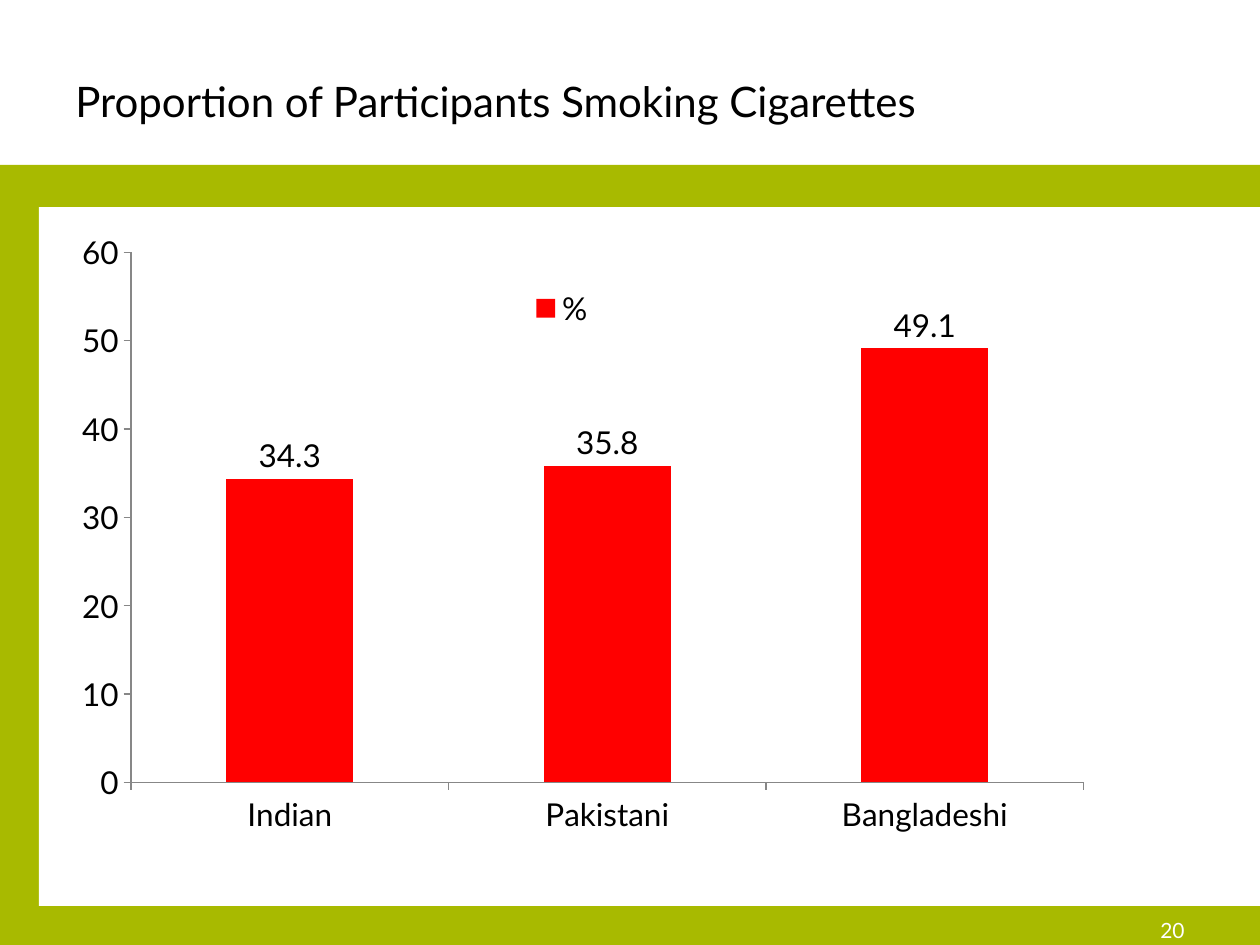
from pptx import Presentation
from pptx.chart.data import CategoryChartData
from pptx.dml.color import RGBColor
from pptx.enum.chart import XL_CHART_TYPE, XL_LABEL_POSITION, XL_LEGEND_POSITION, XL_TICK_MARK
from pptx.enum.shapes import MSO_SHAPE
from pptx.enum.text import MSO_ANCHOR, PP_ALIGN
from pptx.oxml import parse_xml
from pptx.oxml.ns import nsdecls
from pptx.util import Pt

PX = 914400 // 126
FONT = "Lato"
GREEN = RGBColor(0xA8, 0xBA, 0x00)
WHITE = RGBColor(0xFF, 0xFF, 0xFF)
BLACK = RGBColor(0x00, 0x00, 0x00)
RED = RGBColor(0xFF, 0x00, 0x00)
GREY = RGBColor(0x87, 0x87, 0x87)

deck = Presentation()
deck.slide_width = 1260 * PX
deck.slide_height = 945 * PX
slide = deck.slides.add_slide(deck.slide_layouts[6])


def add_text(text, box, size, color, align=PP_ALIGN.LEFT):
    frame = slide.shapes.add_textbox(*[n * PX for n in box]).text_frame
    frame.word_wrap = True
    frame.vertical_anchor = MSO_ANCHOR.MIDDLE
    line = frame.paragraphs[0]
    line.text = text
    line.alignment = align
    line.font.name = FONT
    line.font.size = Pt(size)
    line.font.color.rgb = color


def set_layout(parent, index, **parts):
    for old in parent.xpath("c:layout"):
        parent.remove(old)
    modes = "".join(f'<c:{axis}Mode val="edge"/>' for axis in "xy")
    sizes = "".join(f'<c:{key} val="{val}"/>' for key, val in parts.items())
    inner = '<c:layoutTarget val="inner"/>' if index == 0 else ""
    parent.insert(index, parse_xml(
        f'<c:layout {nsdecls("c")}><c:manualLayout>{inner}{modes}{sizes}'
        "</c:manualLayout></c:layout>"))


for box, color in (((0, 165, 1260, 780), GREEN), ((39, 207, 1221, 699), WHITE)):
    panel = slide.shapes.add_shape(MSO_SHAPE.RECTANGLE, *[n * PX for n in box])
    panel.shadow.inherit = False
    panel.fill.solid()
    panel.fill.fore_color.rgb = color
    panel.line.fill.background()

add_text("Proportion of Participants Smoking Cigarettes", (63, 38, 922, 126), 24, BLACK)

data = CategoryChartData()
data.categories = ["Indian", "Pakistani", "Bangladeshi"]
data.add_series("%", (34.3, 35.8, 49.1))
chart = slide.shapes.add_chart(
    XL_CHART_TYPE.COLUMN_CLUSTERED, 63 * PX, 221 * PX, 1134 * PX, 624 * PX, data).chart
chart.has_title = False
chart.font.name = FONT
chart.font.size = Pt(18)
chart.font.color.rgb = BLACK

for axis in (chart.category_axis, chart.value_axis):
    axis.has_major_gridlines = False
    axis.major_tick_mark = XL_TICK_MARK.OUTSIDE
    axis.minor_tick_mark = XL_TICK_MARK.NONE
    axis.format.line.color.rgb = GREY
    axis.format.line.width = Pt(0.75)
chart.value_axis.minimum_scale = 0
chart.value_axis.maximum_scale = 60
chart.value_axis.major_unit = 10

plot = chart.plots[0]
plot.gap_width = 150
plot.vary_by_categories = False
bars = plot.series[0]
bars.format.fill.solid()
bars.format.fill.fore_color.rgb = RED
labels = bars.data_labels
labels.show_value = True
labels.position = XL_LABEL_POSITION.OUTSIDE_END

chart.has_legend = True
chart.legend.position = XL_LEGEND_POSITION.RIGHT
chart.legend.include_in_layout = False
area = chart.element.xpath("c:chart/c:plotArea")[0]
key = chart.element.xpath("c:chart/c:legend")[0]
set_layout(area, 0, x=0.06, y=0.05, w=0.84, h=0.85)
set_layout(key, 1, x=0.41, y=0.1, w=0.06, h=0.08)

add_text("20", (903, 905, 294, 50), 12, WHITE, PP_ALIGN.RIGHT)

deck.save("out.pptx")
